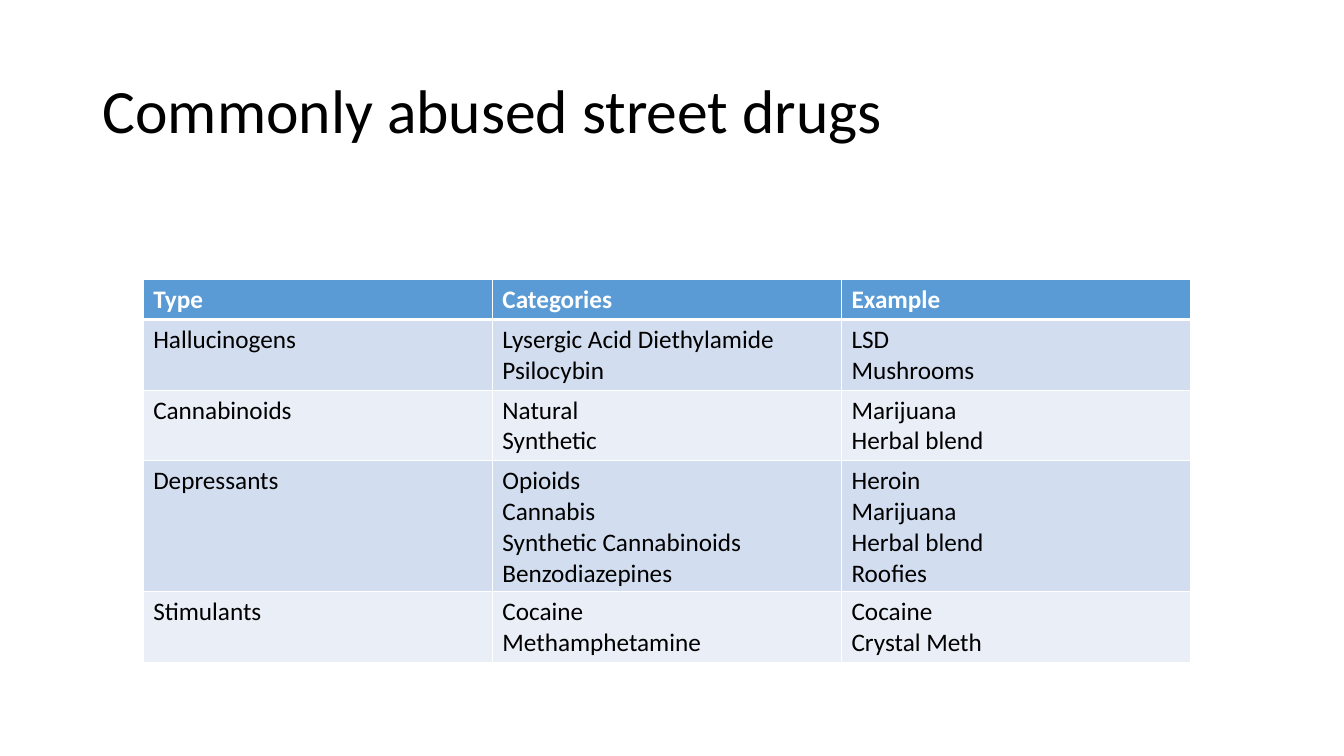
from lxml import etree
from pptx import Presentation
from pptx.dml.color import RGBColor
from pptx.enum.text import MSO_ANCHOR
from pptx.oxml.ns import qn
from pptx.util import Inches, Pt

MIDDLE = MSO_ANCHOR.MIDDLE
FONT = "Calibri"
BLANK_LAYOUT = 6
COLORS = {
    "text": "000000",
    "white": "FFFFFF",
    "header": "5B9BD5",
    "band_dark": "D2DEEF",
    "band_light": "EAEFF7",
}
HEADINGS = ["Type", "Categories", "Example"]
DRUGS = [
    ["Hallucinogens", "Lysergic Acid Diethylamide\nPsilocybin", "LSD\nMushrooms"],
    ["Cannabinoids", "Natural\nSynthetic", "Marijuana\nHerbal blend"],
    [
        "Depressants",
        "Opioids\nCannabis\nSynthetic Cannabinoids\nBenzodiazepines",
        "Heroin\nMarijuana\nHerbal blend\nRoofies",
    ],
    ["Stimulants", "Cocaine\nMethamphetamine", "Cocaine\nCrystal Meth"],
]


def write_text(frame, text, size, color, bold=False):
    """Fill a text frame with one paragraph for each line of text."""
    frame.text = text
    for para in frame.paragraphs:
        para.font.name = FONT
        para.font.size = Pt(size)
        para.font.bold = bold
        para.font.color.rgb = RGBColor.from_string(COLORS[color])


def add_title(page, text):
    """Add the slide title, centred vertically in its box."""
    box = page.shapes.add_textbox(Inches(0.92), Inches(0.4), Inches(11.5), Inches(1.45))
    frame = box.text_frame
    frame.word_wrap = True
    frame.vertical_anchor = MIDDLE
    write_text(frame, text, 44, "text")
    frame.paragraphs[0].line_spacing = 0.9


def set_borders(cell, widths):
    """Draw white borders of the given point widths, keyed by side."""
    properties = cell._tc.get_or_add_tcPr()
    for side, width in widths.items():
        line = etree.SubElement(properties, qn(f"a:ln{side}"), w=str(Pt(width)))
        fill = etree.SubElement(line, qn("a:solidFill"))
        etree.SubElement(fill, qn("a:srgbClr"), val=COLORS["white"])


def style_cell(cell, text, fill, color, is_header, below_header):
    """Write a cell's text and set its borders and fill."""
    write_text(cell.text_frame, text, 18, color, is_header)
    top = 3 if below_header else 1
    bottom = 3 if is_header else 1
    set_borders(cell, {"L": 1, "R": 1, "T": top, "B": bottom})
    cell.fill.solid()
    cell.fill.fore_color.rgb = RGBColor.from_string(COLORS[fill])


def add_drug_table(page, rows):
    """Add the banded table, with row heights that follow the line counts."""
    heights = [0.1 + 0.3 * max(text.count("\n") + 1 for text in row) for row in rows]
    table = page.shapes.add_table(
        len(rows), len(HEADINGS),
        Inches(1.42), Inches(2.77), Inches(10.39), Inches(sum(heights)),
    ).table
    for index, row in enumerate(rows):
        table.rows[index].height = Inches(heights[index])
        is_header = index == 0
        band = "band_dark" if index % 2 else "band_light"
        fill, color = ("header", "white") if is_header else (band, "text")
        for column, text in enumerate(row):
            style_cell(table.cell(index, column), text, fill, color, is_header, index == 1)


def main():
    """Build the slide and save the deck."""
    deck = Presentation()
    deck.slide_width = Inches(13.33)
    deck.slide_height = Inches(7.5)
    page = deck.slides.add_slide(deck.slide_layouts[BLANK_LAYOUT])
    add_title(page, "Commonly abused street drugs")
    add_drug_table(page, [HEADINGS] + DRUGS)
    deck.save("out.pptx")


if __name__ == "__main__":
    main()
